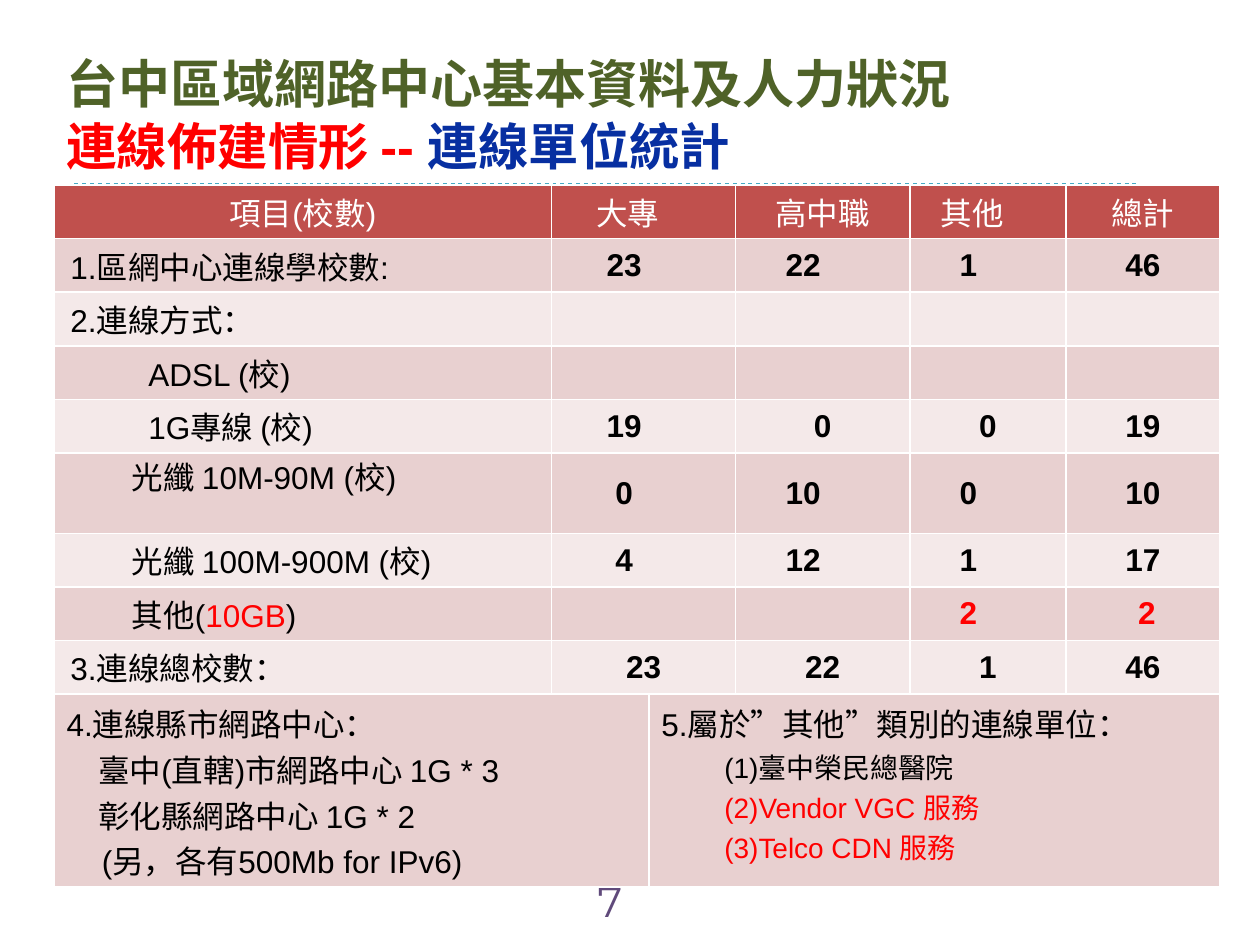
from lxml import etree
from pptx import Presentation
from pptx import util as u
from pptx.dml.color import RGBColor
from pptx.enum import dml, shapes, text
from pptx.oxml import ns

RED, BLACK, WHITE = "FF0000", "000000", "FFFFFF"
HEADER_FILL, BANDS = "C0504D", ("F4E9E9", "E8D0D0")


def color(hex_string):
    return RGBColor.from_string(hex_string)


def write(paragraph, *runs, **font_format):
    """Add (text, hex colour) runs that share the given font attributes."""
    font_format = {"name": "Arial", "size": u.Pt(18), "bold": False} | font_format
    for words, hex_string in runs:
        run = paragraph.add_run()
        run.text = words
        for name, value in font_format.items():
            setattr(run.font, name, value)
        run.font.color.rgb = color(hex_string)


presentation = Presentation()
presentation.slide_width, presentation.slide_height = u.Cm(25.4), u.Cm(19.05)
slide = presentation.slides.add_slide(presentation.slide_layouts[6])

# Page number and rule, both behind the table
page_number = slide.shapes.add_textbox(u.Cm(10.9), u.Cm(17.53), u.Cm(2.79), u.Cm(1.02))
paragraph = page_number.text_frame.paragraphs[0]
paragraph.alignment = text.PP_ALIGN.CENTER
write(paragraph, ("7", "604A7B"), name="Montserrat", size=u.Pt(24))

rule = slide.shapes.add_connector(
    shapes.MSO_CONNECTOR.STRAIGHT, u.Cm(1.5), u.Cm(3.73), u.Cm(22.91), u.Cm(3.73))
rule.line.color.rgb = color("46AAC5")
rule.line.width = u.Pt(2.25)
rule.line.dash_style = dml.MSO_LINE.ROUND_DOT
etree.SubElement(rule._element.spPr, ns.qn("a:effectLst"))

# Title
title = slide.shapes.add_textbox(u.Cm(1.09), u.Cm(0.91), u.Cm(19.2), u.Cm(2.79))
title.text_frame.word_wrap = True
title.text_frame.vertical_anchor = text.MSO_ANCHOR.MIDDLE
paragraph = title.text_frame.paragraphs[0]
paragraph.line_spacing = u.Pt(35)
write(paragraph, ("台中區域網路中心基本資料及人力狀況", "4F6228"), size=u.Pt(29.7), bold=True)
paragraph.add_line_break()
write(paragraph, ("連線佈建情形 -- ", RED), ("連線單位統計", "072FA1"),
      size=u.Pt(28.8), bold=True)

# Table grid
column_widths = [10.03, 1.96, 1.75, 3.51, 3.15, 3.1]
row_heights = [1.08] * 5 + [1.62] + [1.08] * 3 + [3.89]
table = slide.shapes.add_table(
    len(row_heights), len(column_widths), u.Cm(1.09), u.Cm(3.73),
    u.Cm(sum(column_widths)), u.Cm(sum(row_heights))).table
for column, width in zip(table.columns, column_widths):
    column.width = u.Cm(width)
for row, height in zip(table.rows, row_heights):
    row.height = u.Cm(height)

for row_index, row in enumerate(table.rows):
    for cell in row.cells:
        cell.fill.solid()
        cell.fill.fore_color.rgb = color(BANDS[row_index % 2] if row_index else HEADER_FILL)
        properties = cell._tc.get_or_add_tcPr()
        for position, side in enumerate(("lnL", "lnR", "lnT", "lnB")):
            border = etree.Element(ns.qn(f"a:{side}"), w=str(u.Pt(1)))
            border_fill = etree.SubElement(border, ns.qn("a:solidFill"))
            etree.SubElement(border_fill, ns.qn("a:srgbClr"), val=WHITE)
            properties.insert(position, border)
        if row_index < len(row_heights) - 1:
            cell.vertical_anchor = text.MSO_ANCHOR.MIDDLE
            for side in ("left", "right", "top", "bottom"):
                setattr(cell, f"margin_{side}", 0)
    table.cell(row_index, 1).merge(table.cell(row_index, 2)) if row_index < 9 else None

# Header and statistics: label runs, label indent, values, columns set left of centre
VALUE_COLUMNS = (1, 3, 4, 5)
statistics = [
    ([("項目(校數)", WHITE)], 0, ("大專", "高中職", "其他", "總計"), (1, 4)),
    ([("1.區網中心連線學校數:", BLACK)], 0.33, ("23", "22", "1", "46"), (1, 3, 4)),
    ([("2.連線方式：", BLACK)], 0.33, (), ()),
    ([("ADSL (校)", BLACK)], 1.9, (), ()),
    ([("1G專線 (校)", BLACK)], 1.9, ("19", "0", "0", "19"), (1,)),
    ([("光纖 10M-90M (校)", BLACK)], 1.57, ("0", "10", "0", "10"), (1, 3, 4)),
    ([("光纖 100M-900M (校)", BLACK)], 1.57, ("4", "12", "1", "17"), (1, 3, 4)),
    ([("其他(", BLACK), ("10GB", RED), (")", BLACK)], 1.57, ("", "", "2", "2"), (4,)),
    ([("3.連線總校數：", BLACK)], 0.33, ("23", "22", "1", "46"), ()),
]
for row_index, (label, indent, values, shifted_columns) in enumerate(statistics):
    is_header = row_index == 0
    label_cell = table.cell(row_index, 0)
    label_cell.margin_left = u.Cm(indent)
    paragraph = label_cell.text_frame.paragraphs[0]
    if is_header:
        paragraph.alignment = text.PP_ALIGN.CENTER
    write(paragraph, *label)
    value_color = WHITE if is_header else RED if len(label) > 1 else BLACK
    for column_index, value in zip(VALUE_COLUMNS, values):
        if not value:
            continue
        cell = table.cell(row_index, column_index)
        if column_index in shifted_columns:
            cell.margin_right = u.Cm(0.64 if is_header else 0.79)
        paragraph = cell.text_frame.paragraphs[0]
        paragraph.alignment = text.PP_ALIGN.CENTER
        write(paragraph, (value, value_color), bold=not is_header)
table.cell(5, 0).vertical_anchor = text.MSO_ANCHOR.TOP
table.cell(7, 5).margin_left = u.Cm(0.16)

# Notes in the last row: text, indent, size, colour
notes = {
    (0, 1): [
        ("4.連線縣市網路中心：", 0, 18, BLACK),
        ("臺中(直轄)市網路中心 1G * 3", 0.64, 18, BLACK),
        ("彰化縣網路中心 1G * 2", 0.64, 18, BLACK),
        ("(另，各有500Mb for IPv6)", 0.71, 18, BLACK),
    ],
    (2, 5): [
        ("5.屬於”其他”類別的連線單位：", 0, 18, BLACK),
        ("(1)臺中榮民總醫院", 1.27, 16, BLACK),
        ("(2)Vendor VGC 服務", 1.27, 16, RED),
        ("(3)Telco CDN 服務", 1.27, 16, RED),
    ],
}
for (first_column, last_column), lines in notes.items():
    cell = table.cell(9, first_column)
    cell.merge(table.cell(9, last_column))
    for line_index, (words, indent, size, hex_string) in enumerate(lines):
        frame = cell.text_frame
        paragraph = frame.add_paragraph() if line_index else frame.paragraphs[0]
        paragraph._p.get_or_add_pPr().set("marL", str(u.Cm(indent)))
        write(paragraph, (words, hex_string), size=u.Pt(size))

presentation.save("out.pptx")
